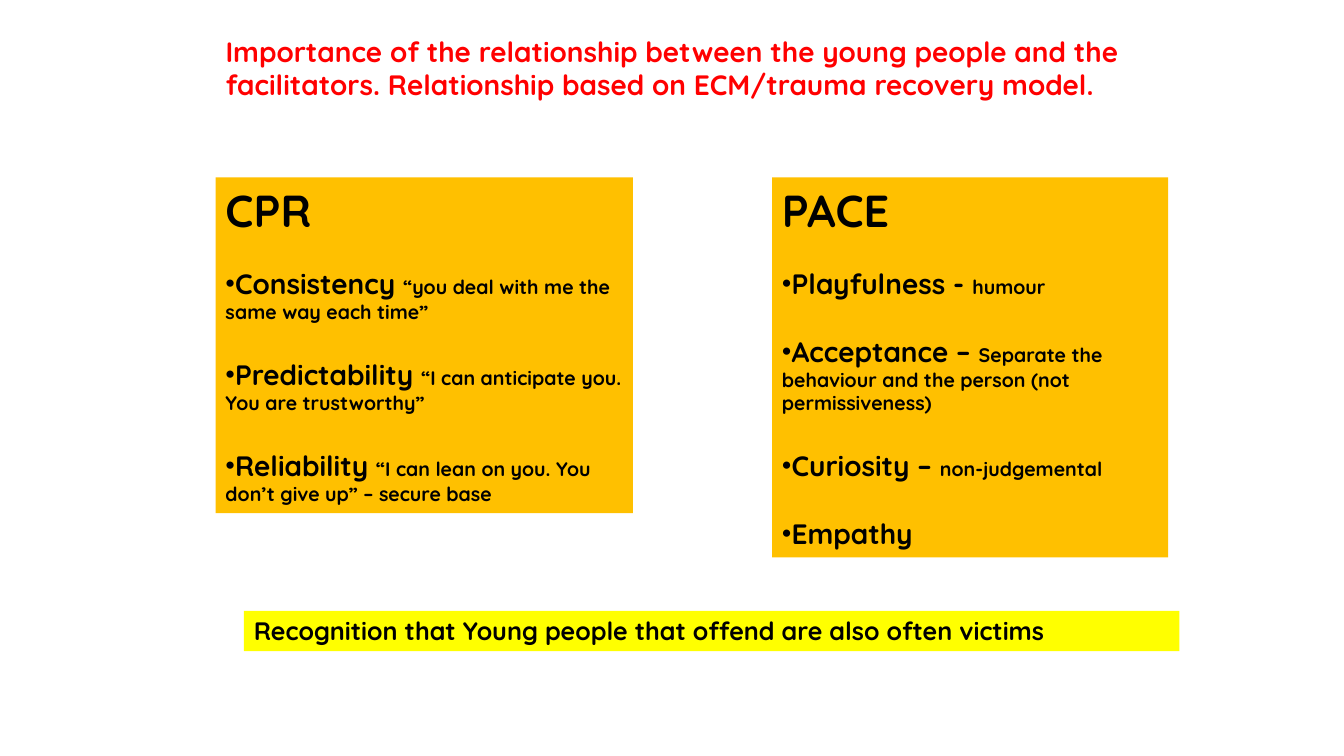
from dataclasses import dataclass

from lxml.etree import SubElement
from pptx import Presentation
from pptx.dml.color import RGBColor
from pptx.enum.shapes import MSO_SHAPE
from pptx.enum.text import MSO_ANCHOR, PP_ALIGN
from pptx.oxml.ns import qn
from pptx.shapes.autoshape import Shape
from pptx.slide import Slide
from pptx.util import Pt

COLOURS = {"title": "FF0000", "text": "000000", "card": "FFC000", "banner": "FFFF00"}
FONT = "Quicksand"
CARD_TOP = 126.7
HEADING_SIZE = 32
TERM_SIZE = 20
DETAIL_SIZE = 14
FIRST_GAP = 21.8
NEXT_GAP = 24.2


@dataclass(frozen=True)
class Point:
    term: str
    detail: str = ""


@dataclass(frozen=True)
class Card:
    heading: str
    left: float
    width: float
    height: float
    points: tuple[Point, ...]


CARDS = (
    Card("CPR", 154, 298.1, 239.8, (
        Point("Consistency ", "“you deal with me the same way each time”"),
        Point("Predictability ", "“I can anticipate you. You are trustworthy”"),
        Point("Reliability ", "“I can lean on you. You don’t give up” – secure base"),
    )),
    Card("PACE", 551.5, 283, 271.4, (
        Point("Playfulness - ", "humour"),
        Point("Acceptance – ", "Separate the behaviour and the person (not permissiveness)"),
        Point("Curiosity – ", "non-judgemental"),
        Point("Empathy"),
    )),
)


def add_box(page: Slide, left: float, top: float, width: float, height: float,
            fill: str) -> Shape:
    box = page.shapes.add_shape(MSO_SHAPE.RECTANGLE, Pt(left), Pt(top), Pt(width), Pt(height))
    box.shadow.inherit = False
    box.fill.solid()
    box.fill.fore_color.rgb = RGBColor.from_string(COLOURS[fill])
    box.line.fill.background()
    box.text_frame.word_wrap = True
    box.text_frame.vertical_anchor = MSO_ANCHOR.TOP
    return box


def add_span(para, text: str, *, size: float, colour: str = "text") -> None:
    span = para.add_run()
    span.text = text
    span.font.name = FONT
    span.font.size = Pt(size)
    span.font.bold = True
    span.font.color.rgb = RGBColor.from_string(COLOURS[colour])
    para.alignment = PP_ALIGN.LEFT


def add_bullet(para) -> None:
    properties = para._p.get_or_add_pPr()
    properties.set("marL", "0")
    properties.set("indent", "0")
    SubElement(properties, qn("a:buFont"), typeface=FONT)
    SubElement(properties, qn("a:buChar"), char="•")


def add_card(page: Slide, card: Card) -> None:
    box = add_box(page, card.left, CARD_TOP, card.width, card.height, "card")
    add_span(box.text_frame.paragraphs[0], card.heading, size=HEADING_SIZE)
    for index, point in enumerate(card.points):
        para = box.text_frame.add_paragraph()
        para.space_before = Pt(NEXT_GAP if index else FIRST_GAP)
        add_bullet(para)
        add_span(para, point.term, size=TERM_SIZE)
        if point.detail:
            add_span(para, point.detail, size=DETAIL_SIZE)


def main() -> None:
    deck = Presentation()
    deck.slide_width, deck.slide_height = Pt(960), Pt(540)
    page = deck.slides.add_slide(deck.slide_layouts[6])

    title = page.shapes.add_textbox(Pt(154), Pt(20.9), Pt(680.4), Pt(55.4))
    title.text_frame.word_wrap = True
    add_span(title.text_frame.paragraphs[0],
             "Importance of the relationship between the young people and the facilitators. "
             "Relationship based on ECM/trauma recovery model.",
             size=20, colour="title")

    for card in CARDS:
        add_card(page, card)

    banner = add_box(page, 174.2, 436.3, 668.2, 28.8, "banner")
    add_span(banner.text_frame.paragraphs[0],
             "Recognition that Young people that offend are also often victims", size=18)

    deck.save("out.pptx")


if __name__ == "__main__":
    main()
